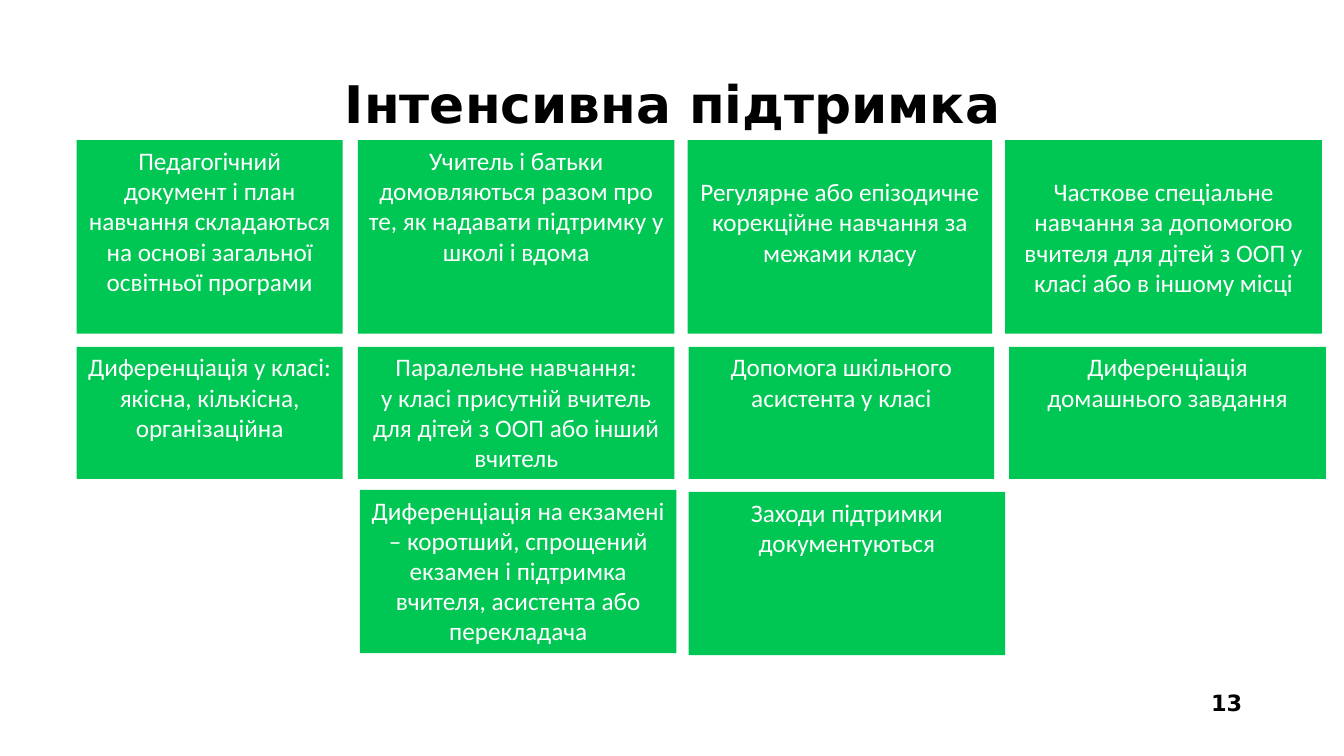
from dataclasses import dataclass

from pptx import Presentation
from pptx.dml.color import RGBColor as RGB
from pptx.enum.shapes import MSO_SHAPE as Shape
from pptx.enum.text import MSO_ANCHOR as Anchor, PP_ALIGN as Align
from pptx.util import Inches, Pt


@dataclass(frozen=True)
class Theme:
    green: RGB = RGB(0x00, 0xC6, 0x54)
    white: RGB = RGB(0xFF, 0xFF, 0xFF)
    black: RGB = RGB(0x00, 0x00, 0x00)
    head: str = "DejaVu Sans"
    body: str = "Calibri"
    title: Pt = Pt(37)
    card: Pt = Pt(18)
    number: Pt = Pt(16)


def assign(target, values):
    for name, value in values.items():
        setattr(target, name, value)


class Deck:
    def __init__(self, slide, theme):
        self.slide = slide
        self.theme = theme

    def add_text(self, shape, text, font, color, frame, para):
        """Fill the shape with one paragraph per line of text."""
        box = shape.text_frame
        assign(box, {"word_wrap": True, **frame})
        box.text = text
        for line in box.paragraphs:
            assign(line, para)
            assign(line.font, font)
            line.font.color.rgb = color

    def add_label(self, area, text, size, **para):
        box = self.slide.shapes.add_textbox(*map(Inches, area))
        font = {"name": self.theme.head, "size": size, "bold": True}
        frame = {"vertical_anchor": Anchor.MIDDLE}
        self.add_text(box, text, font, self.theme.black, frame, para)

    def add_card(self, area, text, **frame):
        box = self.slide.shapes.add_shape(Shape.RECTANGLE, *map(Inches, area))
        box.shadow.inherit = False
        box.fill.solid()
        box.fill.fore_color.rgb = self.theme.green
        box.line.fill.background()
        font = {"name": self.theme.body, "size": self.theme.card}
        frame = {"vertical_anchor": Anchor.TOP, **frame}
        para = {"alignment": Align.CENTER}
        self.add_text(box, text, font, self.theme.white, frame, para)


LOWER = {"margin_top": Inches(0.36)}
LOOSE = {"word_wrap": False}

# Each row: height, then cards as left, top, width, text, frame format
ROWS = [
    (1.92, [
        (0.76, 1.39, 2.64, "Педагогічний документ і план навчання складаються "
         "на основі загальної освітньої програми", {}),
        (3.55, 1.39, 3.14, "Учитель і батьки домовляються разом про те, "
         "як надавати підтримку у школі і вдома", {}),
        (6.82, 1.39, 3.02, "Регулярне або епізодичне корекційне навчання "
         "за межами класу", LOWER),
        (9.97, 1.39, 3.14, "Часткове спеціальне навчання за допомогою вчителя "
         "для дітей з ООП у класі або в іншому місці", LOWER),
    ]),
    (1.31, [
        (0.76, 3.44, 2.64, "Диференціація у класі:\nякісна, кількісна,\n"
         "організаційна", LOOSE),
        (3.55, 3.44, 3.14, "Паралельне навчання:\nу класі присутній вчитель "
         "для дітей з ООП або інший вчитель", {}),
        (6.83, 3.44, 3.03, "Допомога шкільного асистента у класі", {}),
        (10.01, 3.44, 3.14, "Диференціація домашнього завдання", {}),
    ]),
    (1.62, [
        (3.57, 4.86, 3.14, "Диференціація на екзамені – коротший, спрощений "
         "екзамен і підтримка вчителя, асистента або перекладача", {}),
        (6.83, 4.88, 3.14, "Заходи підтримки документуються", {}),
    ]),
]


def main():
    show = Presentation()
    assign(show, {"slide_width": Inches(13.33), "slide_height": Inches(7.5)})
    theme = Theme()
    deck = Deck(show.slides.add_slide(show.slide_layouts[6]), theme)

    deck.add_label((11.58, 6.77, 0.84, 0.4), "13", theme.number,
                   alignment=Align.RIGHT)
    deck.add_label((0.92, 0.4, 11.5, 1.15), "Інтенсивна підтримка",
                   theme.title, alignment=Align.CENTER, line_spacing=1.15)
    for height, cards in ROWS:
        for left, top, width, text, frame in cards:
            deck.add_card((left, top, width, height), text, **frame)

    show.save("out.pptx")


if __name__ == "__main__":
    main()
